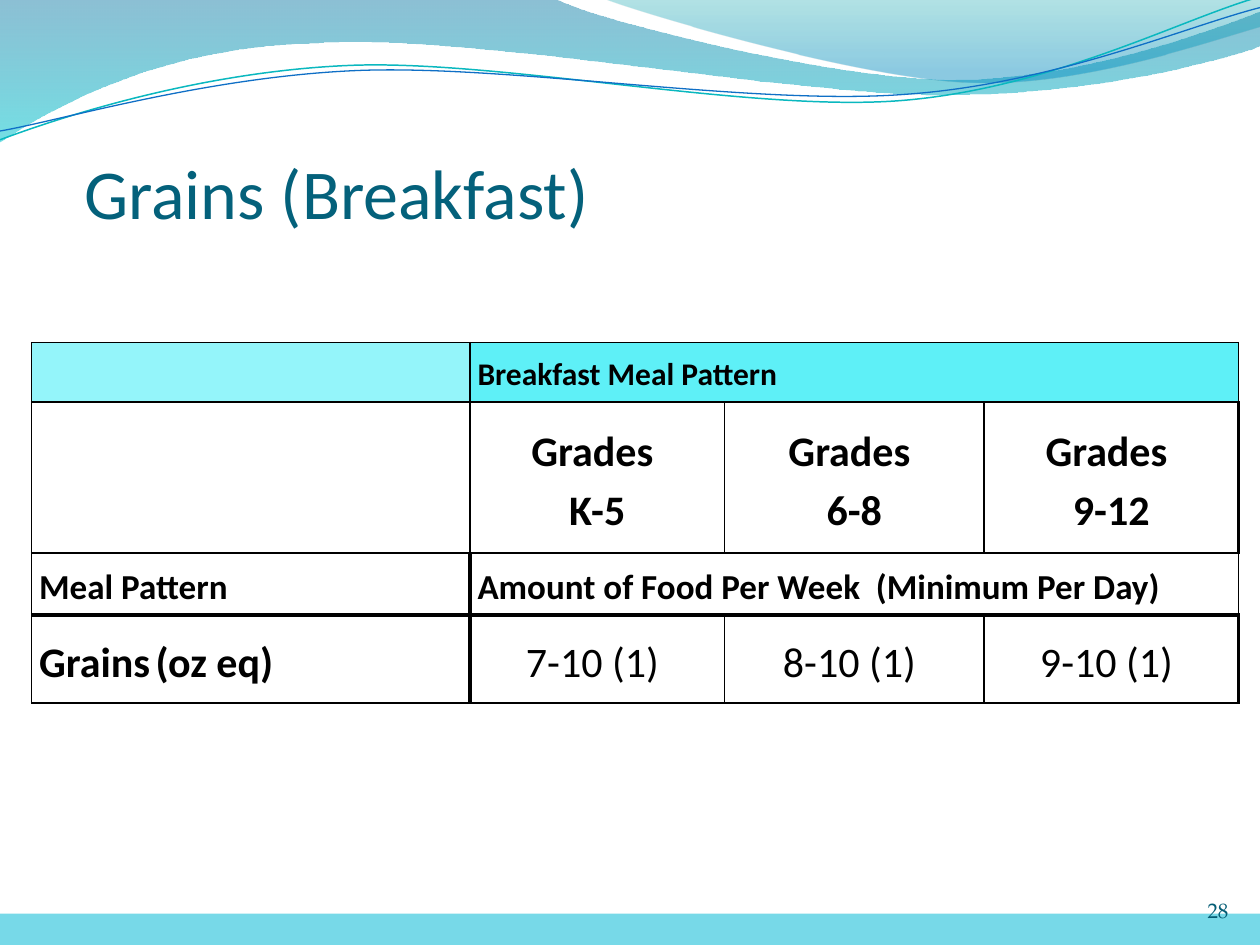
from math import cos, radians, sin

from lxml.etree import SubElement
from pptx import Presentation
from pptx.dml.color import RGBColor
from pptx.enum.shapes import MSO_SHAPE
from pptx.enum.text import MSO_ANCHOR, PP_ALIGN
from pptx.oxml.ns import qn
from pptx.util import Inches, Pt

COLORS = {
    "title": "04617B", "number": "045D75", "footer": "77D9E8",
    "deep blue": "0074A1", "cyan": "00C6CF", "teal": "00A1A9", "blue": "008BBF",
    "teal line": "0AB8BF", "blue line": "0F6FC6",
    "corner": "94F5FA", "header": "5EF0F7", "white": "FFFFFF", "black": "000000",
}
FONT = "Calibri"


def rgb(name):
    return RGBColor.from_string(COLORS[name])


def add_wave(slide, box, start, segments, closed, rotation=0):
    """Draw an outline; a segment is a line end (x, y) or a Bezier (x1, y1, x2, y2, x, y)."""
    left, top, width, height = box
    builder = slide.shapes.build_freeform(Inches(start[0]), Inches(start[1]), scale=1.0)
    builder.add_line_segments([(Inches(s[-2]), Inches(s[-1])) for s in segments], close=closed)
    shape = builder.convert_to_shape()
    shape.shadow.inherit = False
    shape.left, shape.top, shape.width, shape.height = map(Inches, box)
    shape.rotation = rotation

    # Bend the segments, in coordinates of the unrotated box
    outline = next(shape._element.iter(qn("a:path")))
    outline.set("w", str(Inches(width)))
    outline.set("h", str(Inches(height)))
    for child in list(outline):
        outline.remove(child)
    turn = radians(-rotation)
    for index, values in enumerate([start, *segments]):
        tag = "a:moveTo" if index == 0 else "a:lnTo" if len(values) == 2 else "a:cubicBezTo"
        command = SubElement(outline, qn(tag))
        for x, y in zip(values[::2], values[1::2]):
            dx, dy = x - left - width / 2, y - top - height / 2
            local_x = width / 2 + dx * cos(turn) - dy * sin(turn)
            local_y = height / 2 + dx * sin(turn) + dy * cos(turn)
            SubElement(command, qn("a:pt"), x=str(Inches(local_x)), y=str(Inches(local_y)))
    if closed:
        SubElement(outline, qn("a:close"))
    return shape


presentation = Presentation()
presentation.slide_width, presentation.slide_height = Inches(10), Inches(7.5)
slide = presentation.slides.add_slide(presentation.slide_layouts[5])

# Gradient waves: box, start, segments, stops of (position, colour, opacity %)
filled_waves = [
    ((-0.01, -0.01, 10.02, 1.14), (0, 0),
     [(4.4, -0.01), (4.76, 0.17, 6.64, 0.63, 7.58, 0.63), (8.53, 0.63, 9.58, 0.26, 10, 0.09),
      (10.01, 0.36), (9.83, 0.44, 8.7, 0.76, 7.46, 0.75), (6.22, 0.75, 3.82, 0.28, 2.57, 0.34),
      (1.29, 0.36, 0.46, 0.83, -0.01, 1.13), (0, 0)],
     [(0, "deep blue", 45), (1, "cyan", 55)]),
    ((4.79, -0.01, 5.21, 0.7), (4.79, -0.01),
     [(5.09, 0.11, 6.82, 0.62, 7.69, 0.65), (8.56, 0.69, 9.61, 0.32, 10, 0.21),
      (10, 0), (4.79, -0.01)],
     [(0, "teal", 30), (0.8, "blue", 45)]),
]
for box, start, segments, stops in filled_waves:
    wave = add_wave(slide, box, start, segments, True)
    wave.line.fill.background()
    wave.fill.gradient()
    wave.fill.gradient_angle = 270
    for stop, (position, color, _) in zip(wave.fill.gradient_stops, stops):
        stop.position = position
        stop.color.rgb = rgb(color)
    for element, (_, _, opacity) in zip(wave._element.spPr.iter(qn("a:srgbClr")), stops):
        SubElement(element, qn("a:alpha"), val=str(opacity * 1000))

# Wave lines
line_waves = [
    ("teal line", 0.85, (-0.02, 0.22, 10.02, 0.71), (0, 1.11),
     [(0.48, 0.93, 1.58, 0.57, 2.77, 0.52), (3.95, 0.47, 5.93, 0.89, 7.13, 0.8),
      (8.33, 0.71, 9.38, 0.15, 9.98, -0.02)]),
    ("blue line", 0.75, (-0.02, 0.3, 10.03, 0.58), (0, 1.04),
     [(0.47, 0.96, 1.64, 0.61, 2.83, 0.56), (4.03, 0.51, 5.97, 0.84, 7.17, 0.75),
      (8.36, 0.67, 9.41, 0.21, 10, 0.06)]),
]
for color, width, box, start, segments in line_waves:
    wave = add_wave(slide, box, start, segments, False, rotation=357.3)
    wave.fill.background()
    wave.line.color.rgb = rgb(color)
    wave.line.width = Pt(width)

# Title
title = slide.shapes.title
title.left, title.top, title.width, title.height = map(Inches, (0.67, 1, 9.08, 0.85))
frame = title.text_frame
frame.vertical_anchor = MSO_ANCHOR.BOTTOM
frame.margin_left = frame.margin_right = frame.margin_bottom = 0
frame.margin_top = Inches(0.05)
paragraph = frame.paragraphs[0]
paragraph.alignment = PP_ALIGN.LEFT
run = paragraph.add_run()
run.text = "Grains (Breakfast)"
run.font.size, run.font.name = Pt(40), FONT
run.font.color.rgb = rgb("title")

# Table: each cell is a list of paragraphs, each paragraph a list of lines
column_widths = [3.48, 2.02, 2.06, 2.02]
row_heights = [0.47, 1.2, 0.49, 0.7]
rows = [
    [[], [["Breakfast Meal Pattern"]], [], []],
    [[], [["Grades "], ["K-5"]], [["Grades ", "6-8"]], [["Grades ", "9-12"]]],
    [[["Meal Pattern"]], [["Amount of Food Per Week  (Minimum Per Day)"]], [], []],
    [[["Grains (oz eq)"]], [["7-10 (1) "]], [["8-10 (1) "]], [["9-10 (1) "]]],
]
row_sizes = [18, 24, 20, 24]
thick_sides = {(1, 3): "R", (2, 0): "RB", (2, 1): "LB", (2, 2): "B", (2, 3): "B",
               (3, 0): "TR", (3, 1): "LT", (3, 2): "T", (3, 3): "TR"}
table = slide.shapes.add_table(4, 4, Inches(0.25), Inches(2.72),
                               Inches(sum(column_widths)), Inches(sum(row_heights))).table
for column, width in zip(table.columns, column_widths):
    column.width = Inches(width)
for row, height in zip(table.rows, row_heights):
    row.height = Inches(height)
for r in (0, 2):
    table.cell(r, 1).merge(table.cell(r, 3))

for r, texts in enumerate(rows):
    for c, paragraphs in enumerate(texts):
        cell = table.cell(r, c)
        cell.vertical_anchor = MSO_ANCHOR.MIDDLE
        cell.margin_left = cell.margin_right = Inches(0.06)
        cell.margin_top = cell.margin_bottom = 0
        properties = cell._tc.get_or_add_tcPr()
        for side in "LRTB":
            width = Pt(2.25 if side in thick_sides.get((r, c), "") else 1)
            border = SubElement(properties, qn(f"a:ln{side}"), w=str(width))
            border_fill = SubElement(border, qn("a:solidFill"))
            SubElement(border_fill, qn("a:srgbClr"), val=COLORS["black"])
        cell.fill.solid()
        fill = "white" if r else "header" if c else "corner"
        cell.fill.fore_color.rgb = rgb(fill)

        for index, lines in enumerate(paragraphs):
            frame = cell.text_frame
            paragraph = frame.add_paragraph() if index else frame.paragraphs[0]
            paragraph.line_spacing = 1.15
            centered = c > 0 and r in (1, 3)
            paragraph.alignment = PP_ALIGN.CENTER if centered else PP_ALIGN.LEFT
            for number, line in enumerate(lines):
                if number:
                    paragraph.add_line_break()
                # The label of the last row has a narrower space
                parts = ["Grains", " ", "(oz eq)"] if (r, c) == (3, 0) else [line]
                for part in parts:
                    run = paragraph.add_run()
                    run.text = part
                    run.font.size = Pt(14 if part == " " else row_sizes[r])
                    run.font.name = FONT
                    run.font.bold = r < 3 or c == 0
                    run.font.color.rgb = rgb("black")

# Footer band
footer = slide.shapes.add_shape(MSO_SHAPE.RECTANGLE, 0, Inches(7.25), Inches(10), Inches(0.25))
footer.shadow.inherit = False
footer.fill.solid()
footer.fill.fore_color.rgb = rgb("footer")
footer.line.fill.background()

# Slide number
number_box = slide.shapes.add_textbox(Inches(8.92), Inches(6.92), Inches(0.83), Inches(0.4))
frame = number_box.text_frame
frame.word_wrap = True
frame.vertical_anchor = MSO_ANCHOR.BOTTOM
frame.margin_left = frame.margin_right = frame.margin_top = frame.margin_bottom = 0
paragraph = frame.paragraphs[0]
paragraph.alignment = PP_ALIGN.RIGHT
run = paragraph.add_run()
run.text = "28"
run.font.size, run.font.name = Pt(12), "TeX Gyre Pagella"
run.font.color.rgb = rgb("number")

presentation.save("out.pptx")
